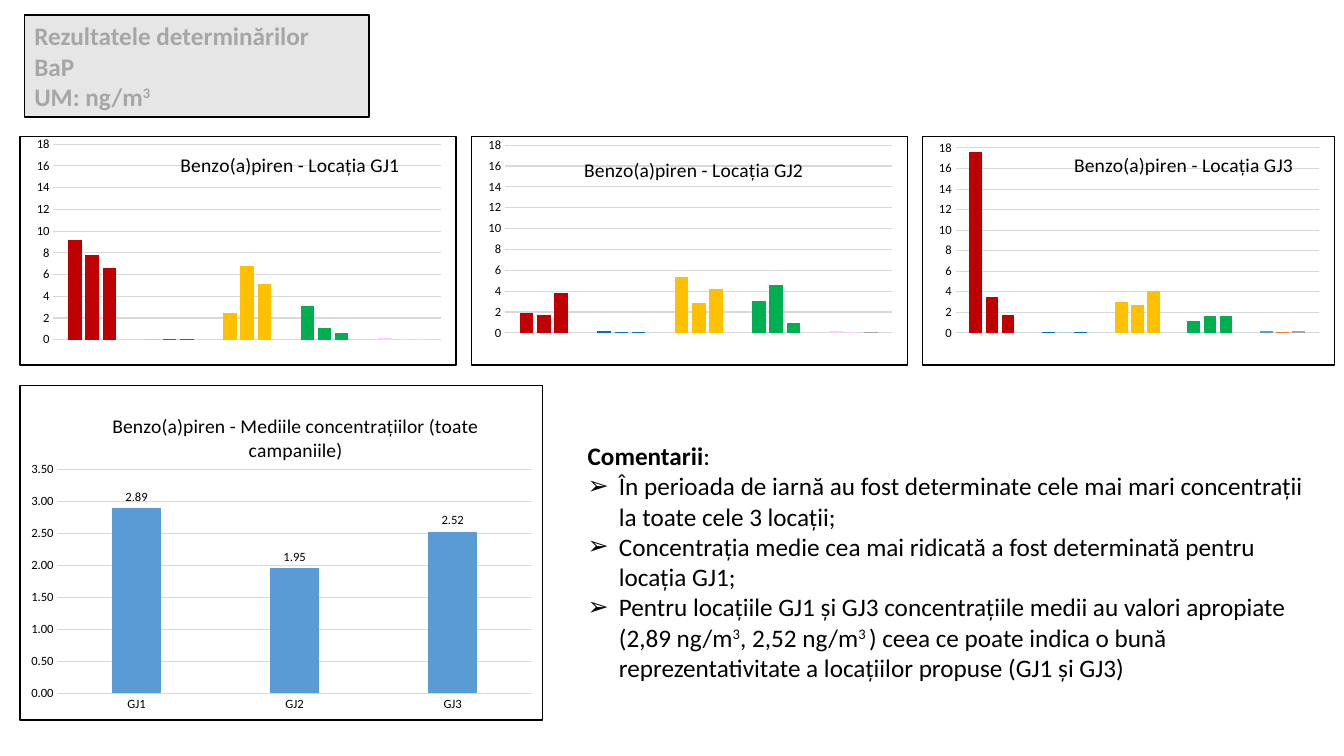
from dataclasses import dataclass
from lxml.etree import SubElement
from pptx import Presentation
from pptx.chart.data import CategoryChartData
from pptx.dml.color import RGBColor
from pptx.enum.chart import XL_CHART_TYPE, XL_LABEL_POSITION, XL_TICK_MARK
from pptx.enum.text import MSO_ANCHOR, MSO_AUTO_SIZE, PP_ALIGN
from pptx.oxml import parse_xml
from pptx.oxml.ns import nsdecls, qn
from pptx.util import Inches, Pt

FACE = "Calibri"
BLACK, WHITE, GRID = "000000", "FFFFFF", "D9D9D9"
TONES = ("5B9BD5", "ED7D31", "A5A5A5")
HUES = ("C00000", "0070C0", "FFC000", "00B050", "FFCCFF")
AXIS = {"major_tick_mark": XL_TICK_MARK.NONE, "minor_tick_mark": XL_TICK_MARK.NONE}


@dataclass
class Bit:
    text: str
    bold: bool = False
    sup: bool = False


@dataclass
class Graph:
    title: str
    box: tuple[float, float, float, float]
    head: tuple[float, float]
    plot: tuple[float, float, float, float]
    cats: tuple[str, ...]
    rows: tuple[tuple[float, ...], ...]
    hues: tuple[int, ...]
    form: str = "General"
    top: int | None = 18


NUMS = ("1", "2", "3", "4", "5")
GRAPHS = (
    Graph("Benzo(a)piren - Locația GJ1", (0.19, 1.35, 4.34, 2.28), (0.36, 0.05),
          (0.077, 0.033, 0.888, 0.856), NUMS,
          ((9.2, 0, 2.5, 3.1, 0.2), (7.8, 0.1, 6.8, 1.1, 0.1), (6.6, 0.1, 5.1, 0.6, 0.1)),
          (5, 5, 5)),
    Graph("Benzo(a)piren - Locația GJ2", (4.67, 1.35, 4.34, 2.28), (0.25, 0.07),
          (0.077, 0.037, 0.888, 0.822), NUMS,
          ((1.9, 0.2, 5.4, 3.1, 0.2), (1.7, 0.1, 2.9, 4.6, 0.1), (3.8, 0.1, 4.2, 0.9, 0.1)),
          (5, 5, 4)),
    Graph("Benzo(a)piren - Locația GJ3", (9.14, 1.35, 4.1, 2.28), (0.36, 0.05),
          (0.081, 0.049, 0.882, 0.81), NUMS,
          ((17.6, 0.1, 3, 1.2, 0.2), (3.5, 0, 2.7, 1.6, 0.1), (1.7, 0.1, 4.1, 1.6, 0.2)),
          (4, 4, 4)),
    Graph("Benzo(a)piren - Mediile concentrațiilor (toate campaniile)",
          (0.19, 3.82, 5.2, 3.33), (0.17, 0.07), (0.072, 0.25, 0.907, 0.67),
          ("GJ1", "GJ2", "GJ3"), ((2.89, 1.95, 2.52),), (0,), "0.00", None),
)
LEAD = (
    (Bit("Rezultatele determinărilor", True),),
    (Bit("BaP", True),),
    (Bit("UM: ng/m", True), Bit("3", True, True)),
)
NOTES = (
    (Bit("Comentarii", True), Bit(":")),
    (Bit("În perioada de iarnă au fost determinate cele mai mari concentrații "
         "la toate cele 3 locații;"),),
    (Bit("Concentrația medie cea mai ridicată a fost determinată pentru locația GJ1;"),),
    (Bit("Pentru locațiile GJ1 și GJ3 concentrațiile medii au valori apropiate (2,89 ng/m"),
     Bit("3", sup=True), Bit(", 2,52 ng/m"), Bit("3 ", sup=True),
     Bit(") ceea ce poate indica o bună reprezentativitate a locațiilor propuse (GJ1 și GJ3)")),
)


def put(item, looks: dict) -> None:
    for name, value in looks.items():
        setattr(item, name, value)


def tint(part, hue: str) -> None:
    part.solid()
    part.fore_color.rgb = RGBColor.from_string(hue)


def style(font, size: float, hue: str = BLACK, bold: bool = False) -> None:
    put(font, {"name": FACE, "size": Pt(size), "bold": bold})
    font.color.rgb = RGBColor.from_string(hue)


def rule(line, hue: str, width: float) -> None:
    tint(line.fill, hue)
    line.width = Pt(width)


def write(frame, lines: tuple, hue: str, mark: str = "") -> None:
    put(frame, {"word_wrap": True, "auto_size": MSO_AUTO_SIZE.NONE})
    for i, bits in enumerate(lines):
        para = frame.paragraphs[0] if i == 0 else frame.add_paragraph()
        para.alignment = PP_ALIGN.LEFT
        for bit in bits:
            run = para.add_run()
            run.text = bit.text
            style(run.font, 18, hue, bit.bold)
            if bit.sup:
                run._r.get_or_add_rPr().set("baseline", "30000")
        if mark and i:
            props = para._p.get_or_add_pPr()
            dent = Inches(0.31)
            props.set("marL", str(dent))
            props.set("indent", str(-dent))
            SubElement(props, qn("a:buFont")).set("typeface", "Wingdings 2")
            props[-1].set("typeface", "Arial")
            SubElement(props, qn("a:buChar")).set("char", mark)


def place(host, spot: tuple, after=None) -> None:
    old = host.find(qn("c:layout"))
    if old is not None:
        host.remove(old)
    keys = ("x", "y", "w", "h")[:len(spot)]
    inner = '<c:layoutTarget val="inner"/>' if len(spot) == 4 else ""
    modes = "".join(f'<c:{k}Mode val="edge"/>' for k in keys[:2])
    sizes = "".join(f'<c:{k} val="{v}"/>' for k, v in zip(keys, spot))
    node = parse_xml(f'<c:layout {nsdecls("c")}><c:manualLayout>{inner}{modes}{sizes}'
                     '</c:manualLayout></c:layout>')
    if after is None:
        host.insert(0, node)
    else:
        after.addnext(node)


def draw(slide, graph: Graph) -> None:
    data = CategoryChartData()
    data.categories = graph.cats
    for i, row in enumerate(graph.rows, 1):
        data.add_series(f"Series {i}", row)
    box = map(Inches, graph.box)
    chart = slide.shapes.add_chart(XL_CHART_TYPE.COLUMN_CLUSTERED, *box, data).chart
    style(chart.font, 10)
    chart.has_legend = False
    frame = chart.chart_title.text_frame
    frame.text = graph.title
    style(frame.paragraphs[0].runs[0].font, 14)

    root = chart._chartSpace.find(qn("c:chart"))
    title = root.find(qn("c:title"))
    place(title, graph.head, title.find(qn("c:tx")))
    place(root.find(qn("c:plotArea")), graph.plot)
    root.addnext(parse_xml(
        f'<c:spPr {nsdecls("c", "a")}><a:solidFill><a:srgbClr val="{WHITE}"/></a:solidFill>'
        f'<a:ln w="{Pt(1)}"><a:solidFill><a:srgbClr val="{BLACK}"/></a:solidFill></a:ln></c:spPr>'))

    base, scale = chart.category_axis, chart.value_axis
    for axis in (base, scale):
        put(axis, AXIS)
        style(axis.tick_labels.font, 9)
    base.visible = graph.top is None
    rule(base.format.line, GRID, 0.75)
    put(scale, {"minimum_scale": 0, "maximum_scale": graph.top, "has_major_gridlines": True})
    put(scale.tick_labels, {"number_format": graph.form, "number_format_is_linked": False})
    rule(scale.major_gridlines.format.line, GRID, 0.75)
    scale.format.line.fill.background()

    plot = chart.plots[0]
    put(plot, {"gap_width": 219, "overlap": -27, "vary_by_categories": False})
    for bars, tone, count in zip(plot.series, TONES, graph.hues):
        bars.invert_if_negative = False
        tint(bars.format.fill, tone)
        for i, hue in enumerate(HUES[:count]):
            tint(bars.points[i].format.fill, hue)
    if graph.top is None:
        plot.has_data_labels = True
        tags = plot.data_labels
        put(tags, {"show_value": True, "number_format": "0.00",
                   "number_format_is_linked": False,
                   "position": XL_LABEL_POSITION.OUTSIDE_END})
        style(tags.font, 9)


def main() -> None:
    deck = Presentation()
    put(deck, {"slide_width": Inches(13.33), "slide_height": Inches(7.5)})
    slide = deck.slides.add_slide(deck.slide_layouts[5])
    lead = slide.shapes.title
    put(lead, {"left": Inches(0.24), "top": Inches(0.15),
               "width": Inches(3.42), "height": Inches(1.01)})
    tint(lead.fill, "E7E6E6")
    rule(lead.line, BLACK, 1)
    lead.text_frame.vertical_anchor = MSO_ANCHOR.MIDDLE
    write(lead.text_frame, LEAD, "A6A6A6")
    notes = slide.shapes.add_textbox(*map(Inches, (5.73, 4.32, 7.51, 2.83)))
    write(notes.text_frame, NOTES, BLACK, "➢")
    for graph in GRAPHS:
        draw(slide, graph)
    deck.save("out.pptx")


if __name__ == "__main__":
    main()
